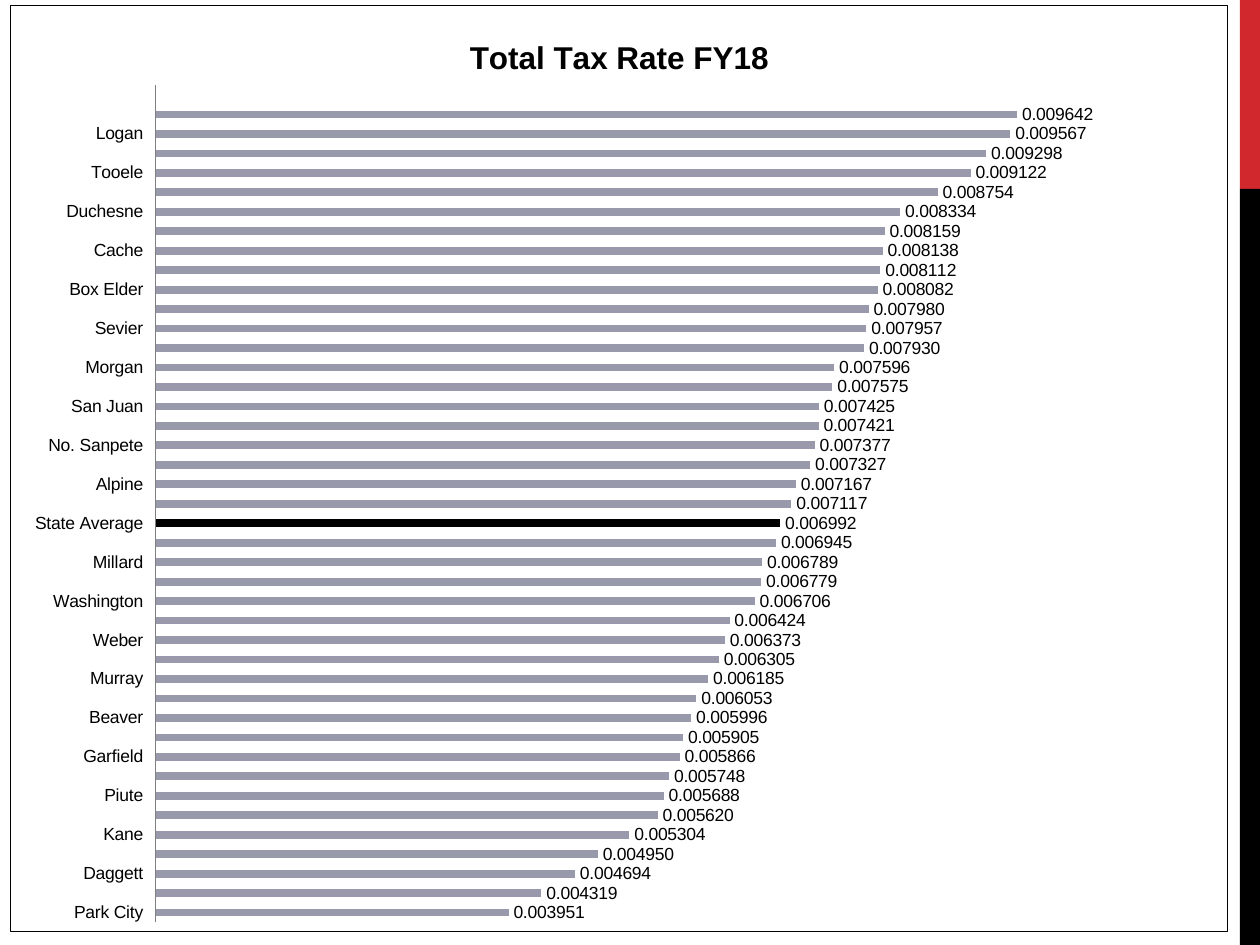
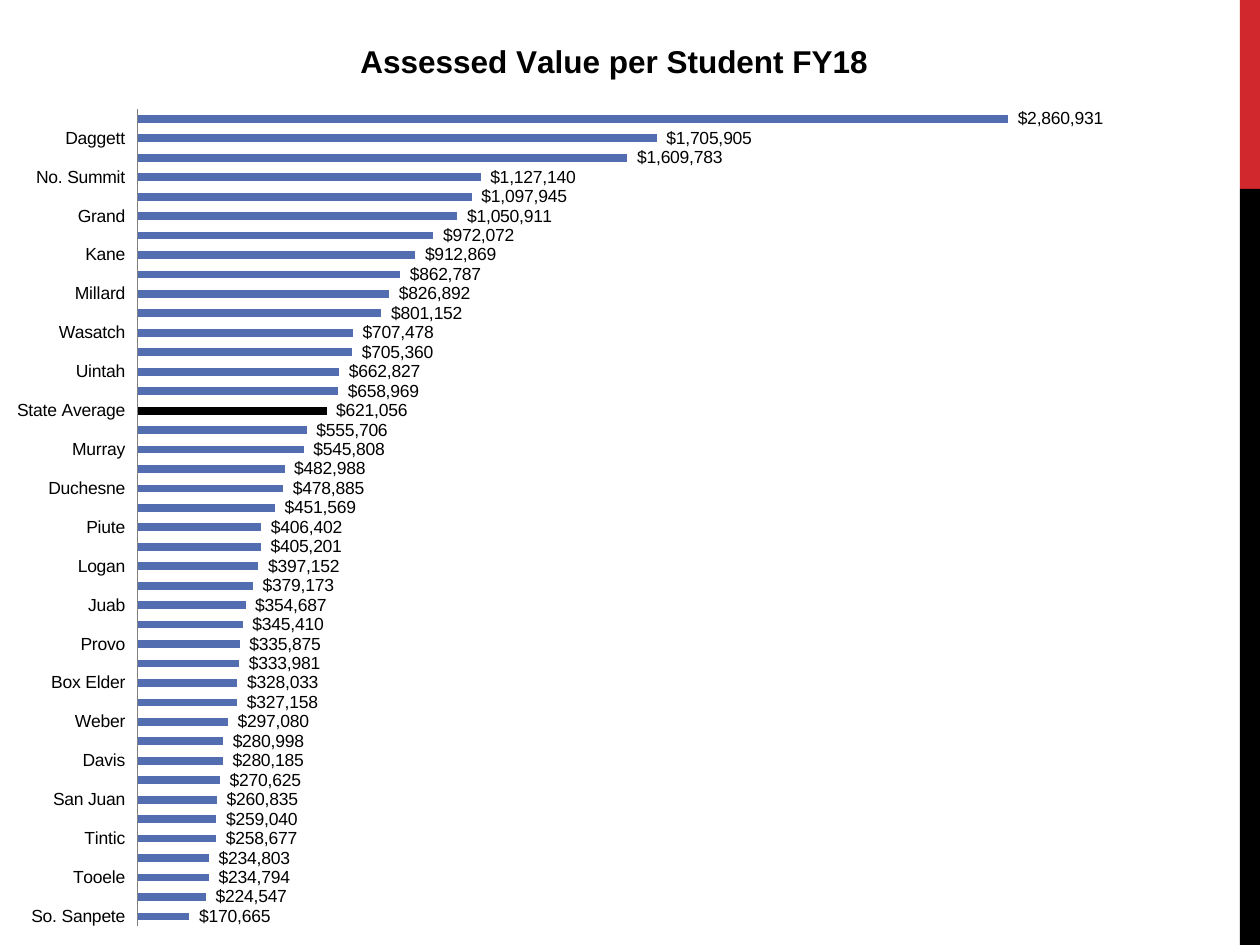
from dataclasses import dataclass

from lxml import etree
from pptx import Presentation
from pptx.chart.data import CategoryChartData
from pptx.dml.color import RGBColor
from pptx.enum.chart import XL_CHART_TYPE, XL_LABEL_POSITION, XL_TICK_LABEL_POSITION, XL_TICK_MARK
from pptx.enum.shapes import MSO_SHAPE
from pptx.oxml import parse_xml
from pptx.oxml.ns import nsdecls, qn
from pptx.util import Inches, Pt

BAR = XL_CHART_TYPE.BAR_CLUSTERED
OUTSIDE_END = XL_LABEL_POSITION.OUTSIDE_END
AXIS_LOW = XL_TICK_LABEL_POSITION.LOW
NO_TICK = XL_TICK_MARK.NONE
RECTANGLE = MSO_SHAPE.RECTANGLE


@dataclass(frozen=True)
class Theme:
    width: float = 10
    height: float = 7.5
    font: str = "Arial"
    title_size: int = 18
    label_size: int = 10
    ink: str = "000000"
    red: str = "D1282E"
    axis: str = "808080"
    tax_bar: str = "989AAC"
    value_bar: str = "526DB0"


THEME = Theme()
AVERAGE = "State Average"
RATE_FORMAT = "0.000000"
DOLLAR_FORMAT = '_("$"* #,##0_)'

# District figures, from the bottom bar to the top one
TAX_RATES = [
    ("Park City", 0.003951), ("Wayne", 0.004319), ("Daggett", 0.004694),
    ("Rich", 0.00495), ("Kane", 0.005304), ("No. Summit", 0.00562),
    ("Piute", 0.005688), ("Salt Lake", 0.005748), ("Garfield", 0.005866),
    ("So. Summit", 0.005905), ("Beaver", 0.005996), ("Emery", 0.006053),
    ("Murray", 0.006185), ("Iron", 0.006305), ("Weber", 0.006373),
    ("Jordan", 0.006424), ("Washington", 0.006706), ("Granite", 0.006779),
    ("Millard", 0.006789), ("Grand", 0.006945), (AVERAGE, 0.006992),
    ("Canyons", 0.007117), ("Alpine", 0.007167), ("Provo", 0.007327),
    ("No. Sanpete", 0.007377), ("Uintah", 0.007421), ("San Juan", 0.007425),
    ("Davis", 0.007575), ("Morgan", 0.007596), ("Carbon", 0.00793),
    ("Sevier", 0.007957), ("Wasatch", 0.00798), ("Box Elder", 0.008082),
    ("Tintic", 0.008112), ("Cache", 0.008138), ("Juab", 0.008159),
    ("Duchesne", 0.008334), ("Ogden", 0.008754), ("Tooele", 0.009122),
    ("Nebo", 0.009298), ("Logan", 0.009567), ("So. Sanpete", 0.009642),
    ("", None),  # free row above the top bar
]
ASSESSED_VALUES = [
    ("So. Sanpete", 170665), ("Nebo", 224547), ("Tooele", 234794),
    ("Cache", 234803), ("Tintic", 258677), ("No. Sanpete", 259040),
    ("San Juan", 260835), ("Alpine", 270625), ("Davis", 280185),
    ("Sevier", 280998), ("Weber", 297080), ("Ogden", 327158),
    ("Box Elder", 328033), ("Morgan", 333981), ("Provo", 335875),
    ("Jordan", 345410), ("Juab", 354687), ("Granite", 379173),
    ("Logan", 397152), ("Iron", 405201), ("Piute", 406402),
    ("Washington", 451569), ("Duchesne", 478885), ("Carbon", 482988),
    ("Murray", 545808), ("Canyons", 555706), (AVERAGE, 621056),
    ("Garfield", 658969), ("Uintah", 662827), ("Wayne", 705360),
    ("Wasatch", 707478), ("Beaver", 801152), ("Millard", 826892),
    ("Emery", 862787), ("Kane", 912869), ("Salt Lake", 972072),
    ("Grand", 1050911), ("So. Summit", 1097945), ("No. Summit", 1127140),
    ("Rich", 1609783), ("Daggett", 1705905), ("Park City", 2860931),
]


def rgb(code):
    return RGBColor.from_string(code)


def style_font(font, size=THEME.label_size, bold=False, color=THEME.ink):
    font.name = THEME.font
    font.size = Pt(size)
    font.bold = bold
    font.color.rgb = rgb(color)


def write_text(frame, text, **text_format):
    frame.text = text
    style_font(frame.paragraphs[0].runs[0].font, **text_format)


def add_band(slide, top, height, color):
    """Add one block of the strip along the right edge."""
    left = 0.984 * THEME.width
    band = slide.shapes.add_shape(
        RECTANGLE, Inches(left), Inches(top * THEME.height),
        Inches(THEME.width - left), Inches(height * THEME.height))
    band.shadow.inherit = False
    band.fill.solid()
    band.fill.fore_color.rgb = rgb(color)
    band.line.fill.background()


def add_side_strip(slide):
    add_band(slide, 0, 0.2, THEME.red)
    add_band(slide, 0.2, 0.8, THEME.ink)


def place_plot(chart, plot_box):
    """Fix the inner plot area as shares of the chart."""
    area = chart._chartSpace.chart.plotArea
    for layout in area.findall(qn("c:layout")):
        area.remove(layout)
    layout = etree.Element(qn("c:layout"))
    manual = etree.SubElement(layout, qn("c:manualLayout"))
    settings = [("layoutTarget", "inner"), ("xMode", "edge"), ("yMode", "edge")]
    for tag, setting in settings + list(zip("xywh", plot_box)):
        etree.SubElement(manual, qn(f"c:{tag}")).set("val", str(setting))
    area.insert(0, layout)


def frame_chart(chart, border):
    paint = f'<a:solidFill><a:srgbClr val="{border}"/></a:solidFill>' if border else "<a:noFill/>"
    chart._chartSpace.chart.addnext(parse_xml(
        f'<c:spPr {nsdecls("c", "a")}><a:noFill/>'
        f'<a:ln w="{Pt(0.75)}">{paint}</a:ln></c:spPr>'))


def add_district_chart(slide, title, districts, box, plot_box, maximum,
                       number_format, bar_color, border=None):
    names, figures = zip(*districts)
    data = CategoryChartData(number_format=number_format)
    data.categories = names
    data.add_series(title, figures)
    chart = slide.shapes.add_chart(BAR, *map(Inches, box), data).chart
    style_font(chart.font)
    chart.has_legend = False
    chart.has_title = True
    write_text(chart.chart_title.text_frame, title, size=THEME.title_size, bold=True)
    place_plot(chart, plot_box)
    frame_chart(chart, border)

    # Axes
    district_axis, figure_axis = chart.category_axis, chart.value_axis
    district_axis.major_tick_mark = NO_TICK
    district_axis.tick_label_position = AXIS_LOW
    district_axis.format.line.color.rgb = rgb(THEME.axis)
    figure_axis.minimum_scale = 0
    figure_axis.maximum_scale = maximum
    figure_axis.has_major_gridlines = False
    figure_axis.visible = False

    # Bars, with the state average picked out
    plot = chart.plots[0]
    plot.vary_by_categories = False
    plot.gap_width = 150
    plot.overlap = -25
    bars = plot.series[0]
    average_bar = bars.points[names.index(AVERAGE)]
    for target, color in ((bars, bar_color), (average_bar, THEME.ink)):
        target.format.fill.solid()
        target.format.fill.fore_color.rgb = rgb(color)

    # Figures at the bar ends
    plot.has_data_labels = True
    labels = plot.data_labels
    labels.show_value = True
    labels.position = OUTSIDE_END
    labels.number_format = number_format
    labels.number_format_is_linked = False
    style_font(labels.font)


def main():
    deck = Presentation()
    deck.slide_width, deck.slide_height = Inches(THEME.width), Inches(THEME.height)
    blank = deck.slide_layouts[6]

    tax_slide = deck.slides.add_slide(blank)
    add_side_strip(tax_slide)
    add_district_chart(
        tax_slide, "Total Tax Rate FY18", TAX_RATES, (0.08, 0.04, 9.67, 7.36),
        (0.119, 0.086, 0.881, 0.904), 0.012, RATE_FORMAT, THEME.tax_bar,
        border=THEME.ink)

    value_slide = deck.slides.add_slide(blank)
    add_side_strip(value_slide)
    add_district_chart(
        value_slide, "Assessed Value per Student FY18", ASSESSED_VALUES,
        (0, 0.08, 9.75, 7.42), (0.112, 0.106, 0.867, 0.874), 3500000,
        DOLLAR_FORMAT, THEME.value_bar)

    deck.save("out.pptx")


if __name__ == "__main__":
    main()
